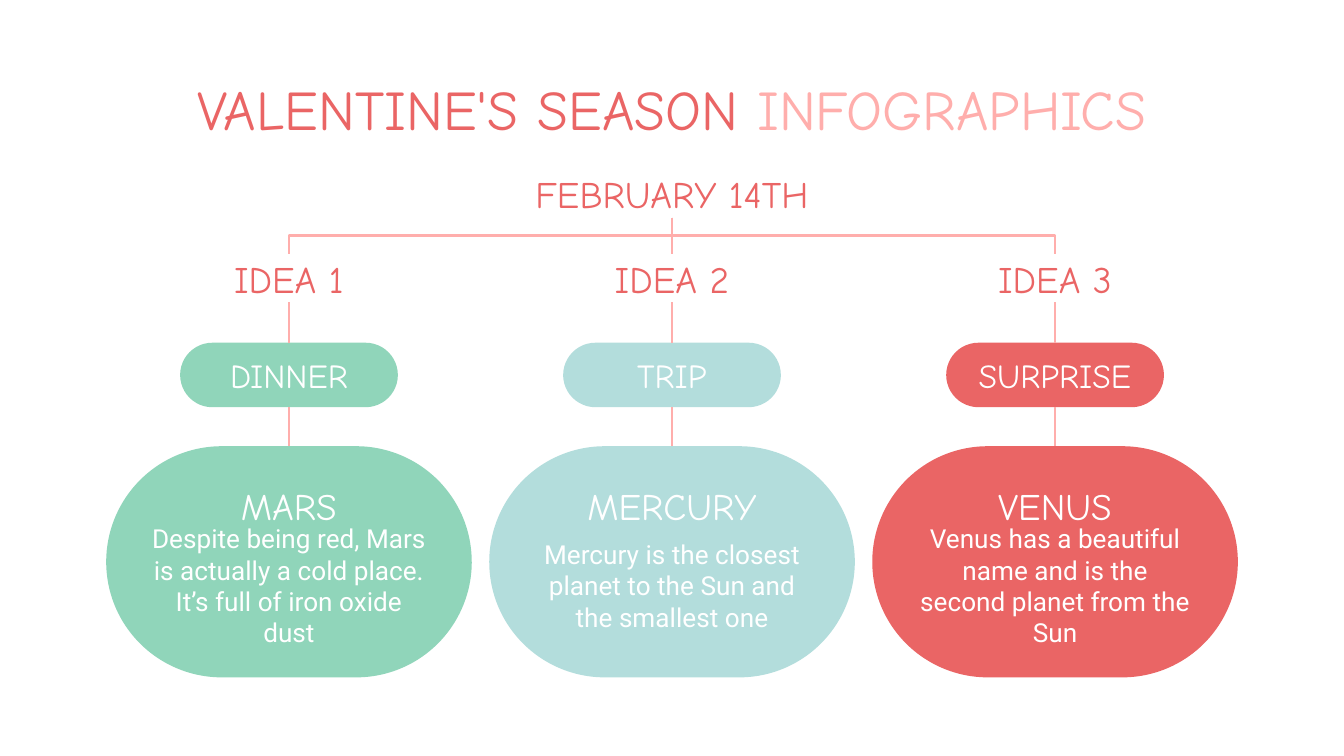
import pptx
import pptx.util
import pptx.dml.color
import pptx.enum.shapes
import pptx.enum.text
import pptx.oxml.ns
import lxml.etree

Inches = pptx.util.Inches
CONNECTOR = pptx.enum.shapes.MSO_CONNECTOR

HEADING = [("VALENTINE'S SEASON ", "coral"), ("INFOGRAPHICS", "blush")]
DATE = "FEBRUARY 14TH"
IDEAS = [
    ("IDEA 1", "DINNER", "MARS", "Despite being red, Mars is actually a cold place. "
     "It’s full of iron oxide dust", "mint"),
    ("IDEA 2", "TRIP", "MERCURY", "Mercury is the closest planet to the Sun and "
     "the smallest one", "aqua"),
    ("IDEA 3", "SURPRISE", "VENUS", "Venus has a beautiful name and is the second "
     "planet from the Sun", "coral"),
]

THEME = {
    "coral": "EA6565", "blush": "FFAEAC", "mint": "90D5BA", "aqua": "B3DDDC",
    "white": "FFFFFF", "display": "Comic Neue", "body": "Roboto",
    "heading_size": 30, "label_size": 20, "pill_size": 18, "body_size": 14,
    "line_width": 1.5,
}

SLIDE_W = 10
SLIDE_H = SLIDE_W * 9 / 16
CENTER, SPACING = SLIDE_W / 2, 2.85
ROW = 0.36
DATE_TOP, IDEA_TOP, PILL_TOP, CARD_TOP = 1.26, 1.89, 2.55, 3.32
PILL_W, PILL_H = 1.62, 0.48
CARD_W, CARD_H = 2.72, 1.72


def color(name):
    return pptx.dml.color.RGBColor.from_string(THEME[name])


def add_text(slide, runs, x, top, width, height, size, font="display"):
    box = slide.shapes.add_textbox(Inches(x - width / 2), Inches(top), Inches(width), Inches(height))
    frame = box.text_frame
    frame.word_wrap = True
    frame.vertical_anchor = pptx.enum.text.MSO_ANCHOR.MIDDLE
    frame.margin_left = frame.margin_right = frame.margin_top = frame.margin_bottom = Inches(0.1)
    paragraph = frame.paragraphs[0]
    paragraph.alignment = pptx.enum.text.PP_ALIGN.CENTER
    for words, tint in runs:
        run = paragraph.add_run()
        run.text = words
        run.font.size = pptx.util.Pt(THEME[size])
        run.font.name = THEME[font]
        run.font.color.rgb = color(tint)


def add_capsule(slide, x, top, width, height, tint):
    capsule = slide.shapes.add_shape(
        pptx.enum.shapes.MSO_SHAPE.ROUNDED_RECTANGLE,
        Inches(x - width / 2), Inches(top), Inches(width), Inches(height))
    capsule.adjustments[0] = 0.5
    capsule.shadow.inherit = False
    capsule.fill.solid()
    capsule.fill.fore_color.rgb = color(tint)
    capsule.line.fill.background()


def add_line(slide, kind, x1, y1, x2, y2):
    line = slide.shapes.add_connector(kind, Inches(x1), Inches(y1), Inches(x2), Inches(y2))
    line.line.color.rgb = color("blush")
    line.line.width = pptx.util.Pt(THEME["line_width"])
    properties = line._element.spPr
    lxml.etree.SubElement(properties, pptx.oxml.ns.qn("a:effectLst"))
    return properties


def add_branch(slide, x, top, bottom):
    if x == CENTER:
        add_line(slide, CONNECTOR.STRAIGHT, x, top, x, bottom)
        return
    side = 1 if x > CENTER else -1
    middle_x, middle_y = (CENTER + x) / 2, (top + bottom) / 2
    half_drop, half_span = side * (bottom - top) / 2, abs(x - CENTER) / 2
    properties = add_line(slide, CONNECTOR.ELBOW, middle_x + half_drop, middle_y - half_span,
                          middle_x - half_drop, middle_y + half_span)
    quarter_turns = 3 if side > 0 else 1
    properties.find(pptx.oxml.ns.qn("a:xfrm")).set("rot", str(quarter_turns * 90 * 60000))


def main():
    deck = pptx.Presentation()
    deck.slide_width, deck.slide_height = Inches(SLIDE_W), Inches(SLIDE_H)
    slide = deck.slides.add_slide(deck.slide_layouts[6])

    add_text(slide, HEADING, CENTER, 0.49, 8.43, 0.63, "heading_size")
    add_text(slide, [(DATE, "coral")], CENTER, DATE_TOP, 8.43, ROW, "label_size")

    for index, (idea, activity, planet, fact, tint) in enumerate(IDEAS):
        x = CENTER + (index - 1) * SPACING
        add_capsule(slide, x, PILL_TOP, PILL_W, PILL_H, tint)
        add_capsule(slide, x, CARD_TOP, CARD_W, CARD_H, tint)
        add_text(slide, [(idea, "coral")], x, IDEA_TOP, 1.34, ROW, "label_size")
        add_text(slide, [(activity, "white")], x, PILL_TOP + 0.06, 1.34, ROW, "pill_size")
        add_text(slide, [(planet, "white")], x, CARD_TOP + 0.26, 2.25, ROW, "label_size")
        add_text(slide, [(fact, "white")], x, CARD_TOP + 0.62, 2.25, 0.83, "body_size", "body")
        add_branch(slide, x, DATE_TOP + ROW, IDEA_TOP)
        for top, bottom in [(IDEA_TOP + ROW, PILL_TOP), (PILL_TOP + PILL_H, CARD_TOP)]:
            add_line(slide, CONNECTOR.STRAIGHT, x, top, x, bottom)

    deck.save("out.pptx")


if __name__ == "__main__":
    main()
